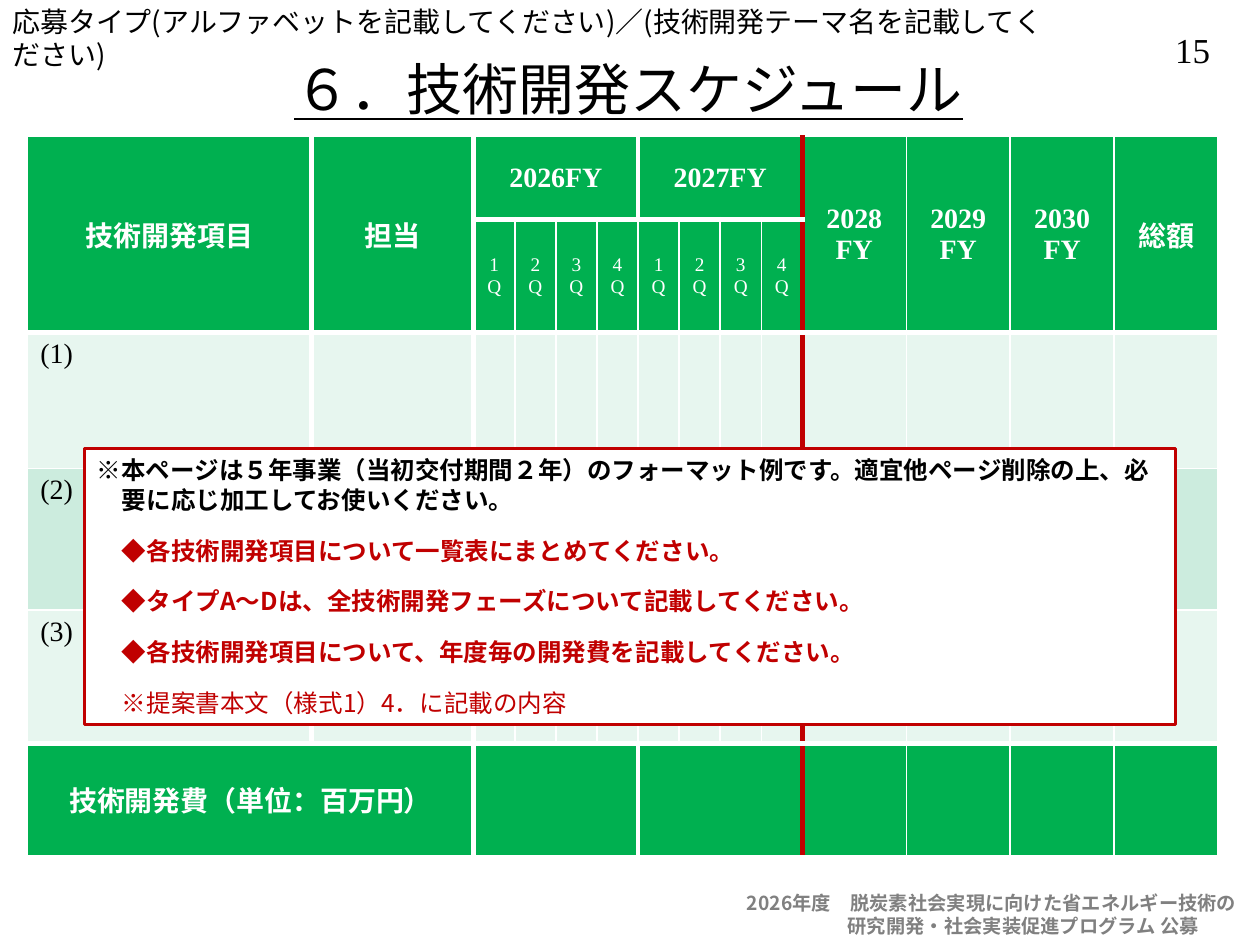
"""Build the technology development schedule slide."""
from dataclasses import dataclass
from itertools import product
from typing import Any

from lxml.etree import SubElement
from pptx import Presentation
from pptx.dml.color import RGBColor
from pptx.enum.shapes import MSO_SHAPE as Preset
from pptx.enum.text import MSO_ANCHOR as Anchor, MSO_AUTO_SIZE as AutoSize, PP_ALIGN as Align
from pptx.oxml.ns import qn
from pptx.util import Inches, Pt


@dataclass(frozen=True)
class Theme:
    """Colours, fonts and type sizes."""
    black: str = "000000"
    white: str = "FFFFFF"
    grey: str = "808080"
    red: str = "C00000"
    green: str = "00B050"
    pale: str = "E7F6EF"
    mint: str = "CCECDE"
    sans: str = "Noto Sans CJK JP"
    serif: str = "Times New Roman"
    title: int = 32
    number: int = 20
    body: int = 16
    note: int = 14
    small: int = 11


THEME = Theme()


@dataclass(frozen=True)
class Line:
    """One paragraph with its format."""
    text: str
    size: int = THEME.body
    color: str = THEME.black
    bold: bool = False
    underline: bool = False
    font: str = THEME.sans
    align: Align = Align.LEFT
    margin: float = 0
    indent: float = 0
    before: int = 0
    spacing: int | None = None


@dataclass(frozen=True)
class Entry:
    """A table cell with its span and text."""
    row: int
    column: int
    lines: tuple[Line, ...] = ()
    rows: int = 1
    columns: int = 1
    anchor: Anchor = Anchor.MIDDLE


@dataclass(frozen=True)
class Box:
    """A text box with its place and paragraphs."""
    place: tuple[float, float, float, float]
    lines: tuple[Line, ...]
    wrap: bool = True


def assign(target: Any, values: dict[str, Any]) -> None:
    """Set each named attribute of the target."""
    for name, value in values.items():
        setattr(target, name, value)


def write(frame: Any, lines: tuple[Line, ...]) -> None:
    """Fill a text frame with formatted paragraphs."""
    for index, line in enumerate(lines):
        paragraph = frame.paragraphs[0] if index == 0 else frame.add_paragraph()
        assign(paragraph, {"alignment": line.align, "space_before": Pt(line.before)})
        if line.spacing:
            paragraph.line_spacing = Pt(line.spacing)
        properties = paragraph._p.get_or_add_pPr()
        properties.set("marL", str(Inches(line.margin)))
        properties.set("indent", str(Inches(line.indent)))
        run = paragraph.add_run()
        run.text = line.text
        assign(run.font, {"size": Pt(line.size), "bold": line.bold,
                          "underline": line.underline, "name": line.font})
        run.font.color.rgb = RGBColor.from_string(line.color)
        SubElement(run._r.get_or_add_rPr(), qn("a:ea"), typeface=THEME.sans)


def add_box(slide: Any, box: Box) -> None:
    """Add a plain text box."""
    frame = slide.shapes.add_textbox(*map(Inches, box.place)).text_frame
    assign(frame, {"word_wrap": box.wrap, "auto_size": AutoSize.SHAPE_TO_FIT_TEXT})
    write(frame, box.lines)


def add_title(slide: Any, place: tuple[float, ...], line: Line) -> None:
    """Place and fill the title placeholder."""
    title = slide.shapes.title
    assign(title, dict(zip(("left", "top", "width", "height"), map(Inches, place))))
    assign(title.text_frame, {"word_wrap": True, "auto_size": AutoSize.NONE,
                              "vertical_anchor": Anchor.MIDDLE})
    write(title.text_frame, (line,))


def add_callout(slide: Any, place: tuple[float, ...], lines: tuple[Line, ...]) -> None:
    """Add the outlined guidance box."""
    shape = slide.shapes.add_shape(Preset.RECTANGLE, *map(Inches, place))
    shape.shadow.inherit = False
    shape.fill.solid()
    shape.fill.fore_color.rgb = RGBColor.from_string(THEME.white)
    shape.line.color.rgb = RGBColor.from_string(THEME.red)
    shape.line.width = Pt(1.5)
    assign(shape.text_frame, {"word_wrap": True, "vertical_anchor": Anchor.TOP,
                              "auto_size": AutoSize.SHAPE_TO_FIT_TEXT})
    write(shape.text_frame, lines)


def vertical_rule(boundary: int, row: int) -> tuple[str, int]:
    """Return colour and width of a column boundary."""
    if boundary == 10:
        return THEME.red, 3
    thick = boundary in (1, 2) or (boundary == 6 and row in (0, 5))
    return THEME.white, 3 if thick else 1


def horizontal_rule(boundary: int) -> tuple[str, int]:
    """Return colour and width of a row boundary."""
    return THEME.white, 3 if boundary in (1, 2, 5) else 1


def draw_borders(cell: Any, row: int, column: int) -> None:
    """Draw the four borders of a cell before its fill is set."""
    rules = {"L": vertical_rule(column, row),
             "R": vertical_rule(column + cell.span_width, row),
             "T": horizontal_rule(row),
             "B": horizontal_rule(row + cell.span_height)}
    properties = cell._tc.get_or_add_tcPr()
    for side, (color, width) in rules.items():
        border = SubElement(properties, qn(f"a:ln{side}"), w=str(Pt(width)))
        SubElement(SubElement(border, qn("a:solidFill")), qn("a:srgbClr"), val=color)


def add_schedule(slide: Any, entries: list[Entry]) -> None:
    """Add the schedule table."""
    widths = [2.25, 1.29] + [2.61 / 8] * 8 + [3.3 / 4] * 4
    heights = [0.66, 0.9, 1.08, 1.12, 1.06, 0.89]
    fills = [THEME.green] * 2 + [THEME.pale, THEME.mint, THEME.pale, THEME.green]
    table = slide.shapes.add_table(len(heights), len(widths), Inches(0.22), Inches(1.08),
                                   Inches(sum(widths)), Inches(sum(heights))).table
    for column, width in zip(table.columns, widths):
        column.width = Inches(width)
    for row, height in zip(table.rows, heights):
        row.height = Inches(height)
    for entry in entries:
        cell = table.cell(entry.row, entry.column)
        if entry.rows * entry.columns > 1:
            cell.merge(table.cell(entry.row + entry.rows - 1, entry.column + entry.columns - 1))
        cell.vertical_anchor = entry.anchor
        write(cell.text_frame, entry.lines)
    for row, column in product(range(len(heights)), range(len(widths))):
        cell = table.cell(row, column)
        if not cell.is_spanned:
            draw_borders(cell, row, column)
        cell.fill.solid()
        cell.fill.fore_color.rgb = RGBColor.from_string(fills[row])


def heading(*texts: str, size: int = THEME.body, bold: bool = True) -> tuple[Line, ...]:
    """Return centred white table lines."""
    return tuple(Line(text, size, THEME.white, bold, font=THEME.serif, align=Align.CENTER)
                 for text in texts)


def schedule_entries() -> list[Entry]:
    """Return the filled and merged cells of the schedule."""
    entries = [Entry(0, index, heading(text), rows=2)
               for index, text in ((0, "技術開発項目"), (1, "担当"), (13, "総額"))]
    entries += [Entry(0, 10 + index, heading(str(2028 + index), "FY"), rows=2) for index in range(3)]
    for index in range(2):
        entries += [Entry(0, 2 + 4 * index, heading(f"{2026 + index}FY"), columns=4),
                    Entry(5, 2 + 4 * index, columns=4)]
    entries += [Entry(1, 2 + index, heading(f"{index % 4 + 1}Q", size=THEME.small, bold=False))
                for index in range(8)]
    entries += [Entry(1 + item, 0, (Line(f"({item})", font=THEME.serif),), anchor=Anchor.TOP)
                for item in (1, 2, 3)]
    return entries + [Entry(5, 0, heading("技術開発費（単位：百万円）"), columns=2)]


def main() -> None:
    """Build and save the presentation."""
    presentation = Presentation()
    assign(presentation, {"slide_width": Inches(10), "slide_height": Inches(7.5)})
    slide = presentation.slides.add_slide(presentation.slide_layouts[5])
    footer = {"size": THEME.small, "color": THEME.grey, "bold": True, "spacing": 13}
    note = {"size": THEME.note, "margin": 0.2, "spacing": 17}
    advice = note | {"color": THEME.red, "before": 12}
    for box in (
        Box((9.14, 0.18, 0.65, 0.43),
            (Line("15", THEME.number, font=THEME.serif, align=Align.CENTER),), wrap=False),
        Box((0, -0.01, 8.4, 0.37),
            (Line("応募タイプ(アルファベットを記載してください)／(技術開発テーマ名を記載してください)",
                  spacing=19),)),
        Box((5.83, 7.03, 4.17, 0.47),
            (Line("2026年度　脱炭素社会実現に向けた省エネルギー技術の", **footer),
             Line("研究開発・社会実装促進プログラム 公募", margin=0.8, **footer))),
    ):
        add_box(slide, box)
    add_title(slide, (0.74, 0.35, 8.5, 0.7),
              Line("６．技術開発スケジュール", THEME.title, underline=True, align=Align.CENTER))
    add_schedule(slide, schedule_entries())
    add_callout(slide, (0.67, 3.56, 8.66, 2.19), (
        Line("※本ページは５年事業（当初交付期間２年）のフォーマット例です。"
             "適宜他ページ削除の上、必要に応じ加工してお使いください。", bold=True, indent=-0.2, **note),
        Line("◆各技術開発項目について一覧表にまとめてください。", bold=True, **advice),
        Line("◆タイプA～Dは、全技術開発フェーズについて記載してください。", bold=True, **advice),
        Line("◆各技術開発項目について、年度毎の開発費を記載してください。", bold=True, **advice),
        Line("※提案書本文（様式1）4．に記載の内容", **advice),
    ))
    presentation.save("out.pptx")


if __name__ == "__main__":
    main()
